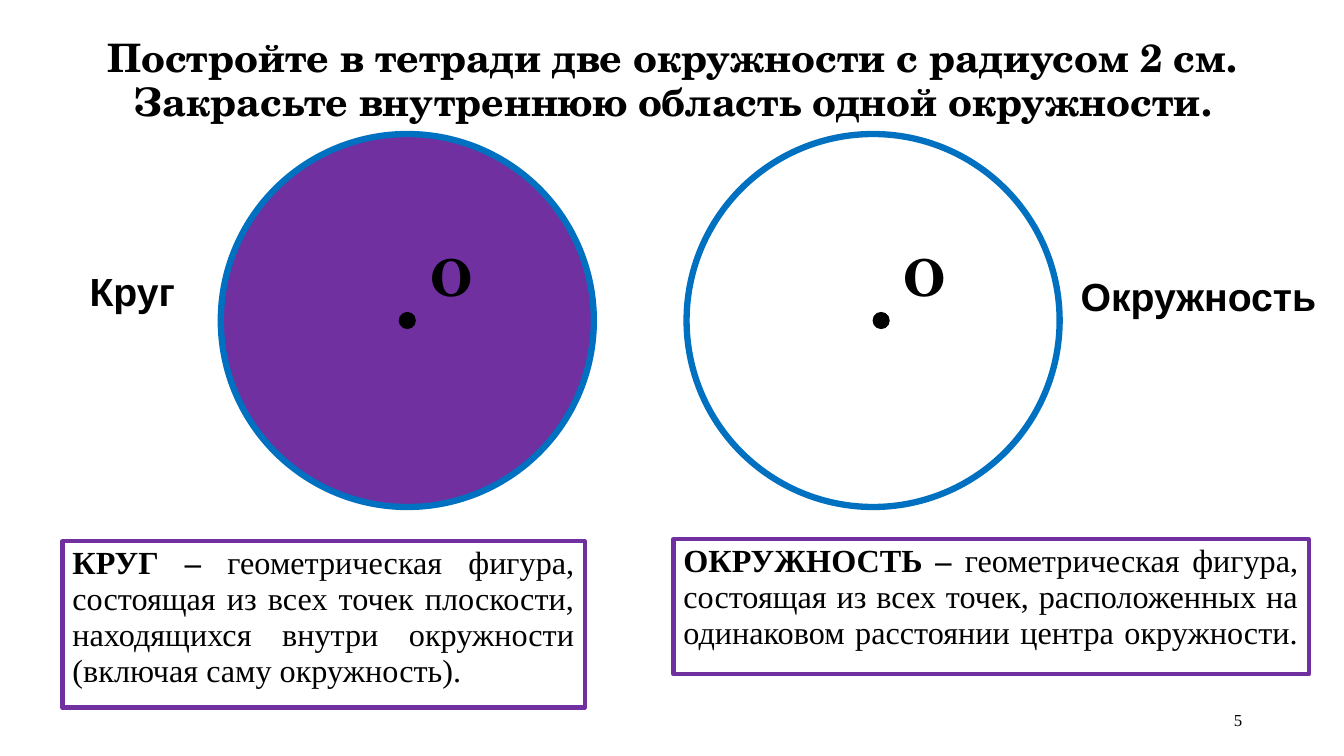
from pptx import Presentation
from pptx.dml.color import RGBColor
from pptx.enum.shapes import MSO_SHAPE
from pptx.enum.text import MSO_ANCHOR, PP_ALIGN
from pptx.util import Inches, Pt

OVAL, RECTANGLE = MSO_SHAPE.OVAL, MSO_SHAPE.RECTANGLE
TOP, MIDDLE = MSO_ANCHOR.TOP, MSO_ANCHOR.MIDDLE
LEFT, CENTER, RIGHT, JUSTIFY = PP_ALIGN.LEFT, PP_ALIGN.CENTER, PP_ALIGN.RIGHT, PP_ALIGN.JUSTIFY
BLACK, PURPLE, BLUE = "000000", "7030A0", "0070C0"
SCHOLA, TIMES, ARIAL = "TeX Gyre Schola", "Times New Roman", "Arial"


def outlined(preset, box, fill, line, width):
    shape = slide.shapes.add_shape(preset, *map(Inches, box))
    shape.shadow.inherit = False
    if fill:
        shape.fill.solid()
        shape.fill.fore_color.rgb = RGBColor.from_string(fill)
    else:
        shape.fill.background()
    shape.line.color.rgb = RGBColor.from_string(line)
    shape.line.width = Pt(width)
    return shape


def write(shape, parts, font, size, align, spacing=1.0, bold=True, anchor=TOP):
    frame = shape.text_frame
    frame.word_wrap = True
    frame.vertical_anchor = anchor
    paragraph = frame.paragraphs[0]
    paragraph.alignment = align
    paragraph.line_spacing = spacing
    paragraph.font.name = font
    paragraph.font.size = Pt(size)
    paragraph.font.bold = bold
    paragraph.font.color.rgb = RGBColor.from_string(BLACK)
    for part in parts:
        paragraph.add_run().text = part
    return paragraph


prs = Presentation()
prs.slide_width, prs.slide_height = Inches(13.33), Inches(7.5)
slide = prs.slides.add_slide(prs.slide_layouts[5])

title = slide.shapes.title
title.left, title.top, title.width, title.height = map(Inches, (0.62, 0.32, 12.1, 0.98))
write(title, ["Постройте в тетради две окружности с радиусом 2 см. "
              "Закрасьте внутреннюю область одной окружности."], SCHOLA, 28, CENTER, 0.93)

figures = [
    (2.19, PURPLE, 3.96, "Круг", (0.79, 2.6, 1.07, 0.57),
     "КРУГ – ", "геометрическая фигура, состоящая из всех точек плоскости, "
     "находящихся внутри окружности (включая саму окружность).", (0.62, 5.37, 5.18, 1.65)),
    (6.81, None, 8.66, "Окружность", (10.62, 2.65, 2.58, 0.57),
     "ОКРУЖНОСТЬ – ", "геометрическая фигура, состоящая из всех точек, "
     "расположенных на одинаковом расстоянии центра окружности. ", (6.68, 5.35, 6.3, 1.34)),
]
for circle_left, fill, center_left, name, name_box, term, meaning, definition_box in figures:
    outlined(OVAL, (circle_left, 1.33, 3.7, 3.7), fill, BLUE, 4.5)
    outlined(OVAL, (center_left, 3.1, 0.16, 0.16), BLACK, BLACK, 0.75)
    center_label = slide.shapes.add_textbox(
        Inches(center_left + 0.16), Inches(2.44), Inches(0.71), Inches(0.67))
    write(center_label, ["O"], SCHOLA, 36.3, CENTER, 0.93)
    figure_name = slide.shapes.add_textbox(*map(Inches, name_box))
    write(figure_name, [name], ARIAL, 28, LEFT)
    definition = outlined(RECTANGLE, definition_box, None, PURPLE, 3)
    sentence = write(definition, [term, meaning], TIMES, 23, JUSTIFY, 0.93, False)
    sentence.runs[0].font.bold = True

page_number = slide.shapes.add_textbox(Inches(9.42), Inches(6.95), Inches(3), Inches(0.4))
write(page_number, ["5"], TIMES, 12, RIGHT, 0.95, False, MIDDLE)

prs.save("out.pptx")
